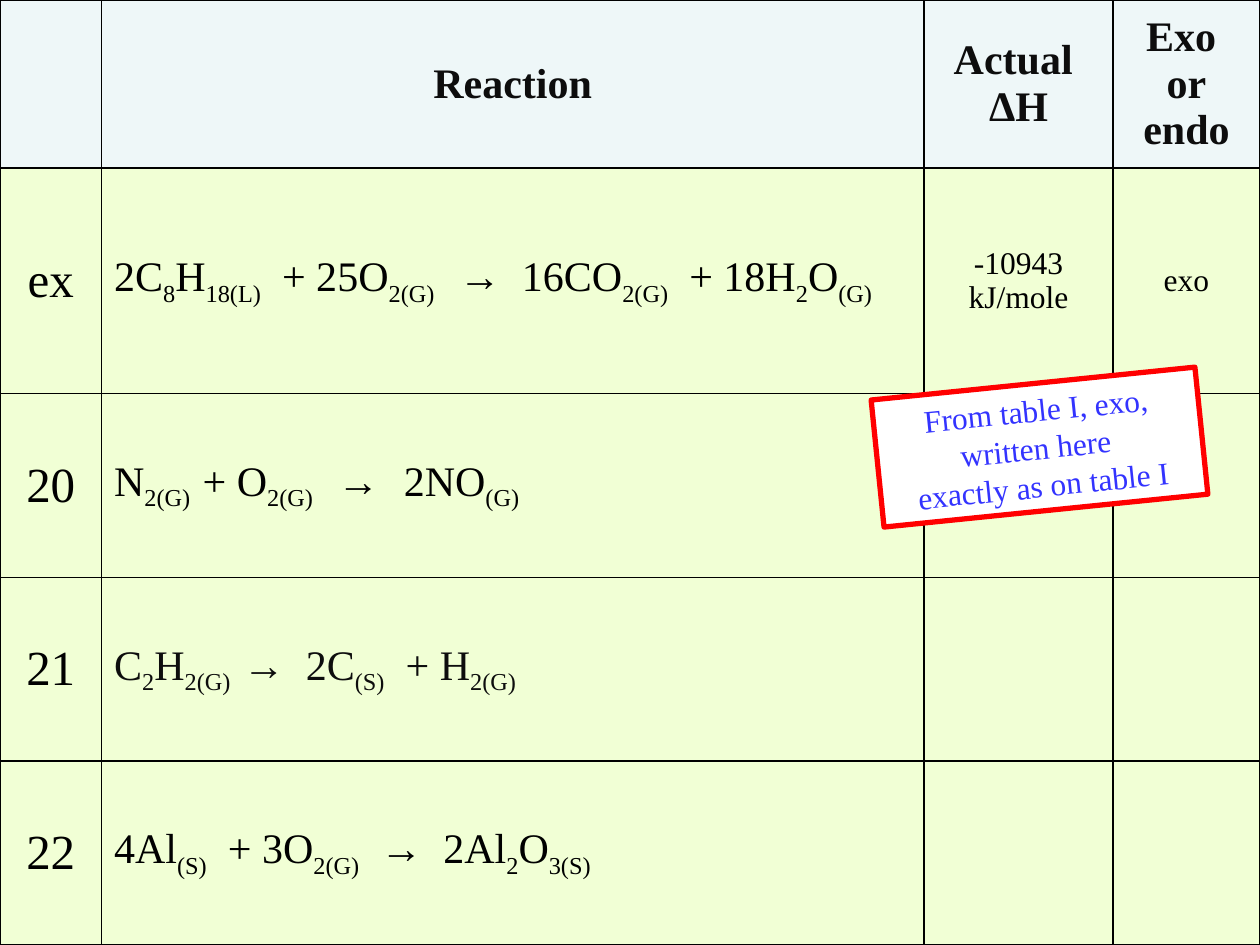
"""Build a slide with a table of reactions, their heats and a tilted note."""
import pptx
import pptx.dml.color
import pptx.enum.shapes
import pptx.enum.text
import pptx.oxml
import pptx.oxml.ns
import pptx.util

Pt = pptx.util.Pt
RGBColor = pptx.dml.color.RGBColor
ALIGN = pptx.enum.text.PP_ALIGN

BLACK = RGBColor(0x00, 0x00, 0x00)
INK = RGBColor(0x0D, 0x0D, 0x0D)
WHITE = RGBColor(0xFF, 0xFF, 0xFF)
RED = RGBColor(0xFF, 0x00, 0x00)
BLUE = RGBColor(0x33, 0x33, 0xFF)
PALE_BLUE = RGBColor(0xEE, 0xF7, 0xF8)
PALE_GREEN = RGBColor(0xF1, 0xFF, 0xD5)
FONT = "Times New Roman"

EN_SPACE, EM_SPACE = chr(0x2002), chr(0x2003)
SUBSCRIPT = "-25000"

# Braces hold subscripts; ~ is an en space and ^ an em space.
ROWS = [
    ("", "Reaction", "Actual \nΔH", "Exo \nor\nendo"),
    ("ex", "2C{8}H{18(L)}~+ 25O{2(G)^}→~16CO{2(G)}~+ 18H{2}O{(G)}",
     "-10943 kJ/mole", "exo"),
    ("20", "N{2(G)~}+ O{2(G)^}→{^}2NO{(G)}", "", ""),
    ("21", "C{2}H{2(G)~}→~2C{(S)}~+ H{2(G)}", "", ""),
    ("22", "4Al{(S)}~+ 3O{2(G)}~→~2Al{2}O{3(S)}", "", ""),
]
NOTE = "From table I, exo, written here \nexactly as on table I"
COLUMN_WIDTHS = [58, 470, 108, 84]
ROW_HEIGHTS = [96, 129, 105, 105, 105]
BODY_SIZES = [28, 24, 18, 18]
REACTION_COLUMN = 1
DARK_GREY_ROW = "21"


def style(paragraph, size, color, bold=False, alignment=ALIGN.CENTER):
    paragraph.alignment = alignment
    font = paragraph.font
    font.name, font.size, font.bold = FONT, Pt(size), bold
    font.color.rgb = color


def write_reaction(paragraph, reaction):
    reaction = reaction.replace("~", EN_SPACE).replace("^", EM_SPACE)
    for index, part in enumerate(reaction.replace("}", "{").split("{")):
        if part:
            run = paragraph.add_run()
            run.text = part
            if index % 2:
                run.font._element.set("baseline", SUBSCRIPT)


def add_borders(cell):
    properties = cell._tc.get_or_add_tcPr()
    for position, side in enumerate(("lnL", "lnR", "lnT", "lnB")):
        properties.insert(position, pptx.oxml.parse_xml(
            f'<a:{side} {pptx.oxml.ns.nsdecls("a")} w="{Pt(1)}"><a:solidFill>'
            f'<a:srgbClr val="{BLACK}"/></a:solidFill></a:{side}>'))


def add_reaction_table(slide):
    table = slide.shapes.add_table(
        len(ROWS), len(COLUMN_WIDTHS), 0, 0,
        Pt(sum(COLUMN_WIDTHS)), Pt(sum(ROW_HEIGHTS))).table
    for column, width in zip(table.columns, COLUMN_WIDTHS):
        column.width = Pt(width)
    for row, height in zip(table.rows, ROW_HEIGHTS):
        row.height = Pt(height)
    for row_index, texts in enumerate(ROWS):
        header = row_index == 0
        for column_index, text in enumerate(texts):
            cell = table.cell(row_index, column_index)
            cell.fill.solid()
            cell.fill.fore_color.rgb = PALE_BLUE if header else PALE_GREEN
            cell.vertical_anchor = pptx.enum.text.MSO_ANCHOR.MIDDLE
            add_borders(cell)
            paragraph = cell.text_frame.paragraphs[0]
            if header:
                paragraph.text = text.replace("\n", "\v")
                style(paragraph, 24, INK, bold=True)
            elif column_index == REACTION_COLUMN:
                write_reaction(paragraph, text)
                color = INK if texts[0] == DARK_GREY_ROW else BLACK
                style(paragraph, BODY_SIZES[column_index], color, alignment=ALIGN.LEFT)
            else:
                paragraph.text = text
                style(paragraph, BODY_SIZES[column_index], BLACK)


def add_note(slide):
    note = slide.shapes.add_shape(
        pptx.enum.shapes.MSO_SHAPE.RECTANGLE, Pt(501), Pt(219), Pt(186), Pt(73))
    note.rotation = 354.2
    note.shadow.inherit = False
    note.fill.solid()
    note.fill.fore_color.rgb = WHITE
    note.line.color.rgb = RED
    note.line.width = Pt(3)
    note.text_frame.word_wrap = True
    paragraph = note.text_frame.paragraphs[0]
    paragraph.text = NOTE.replace("\n", "\v")
    style(paragraph, 18, BLUE)


def main():
    presentation = pptx.Presentation()
    presentation.slide_width, presentation.slide_height = Pt(720), Pt(540)
    slide = presentation.slides.add_slide(presentation.slide_layouts[6])
    add_reaction_table(slide)
    add_note(slide)
    presentation.save("out.pptx")


if __name__ == "__main__":
    main()
